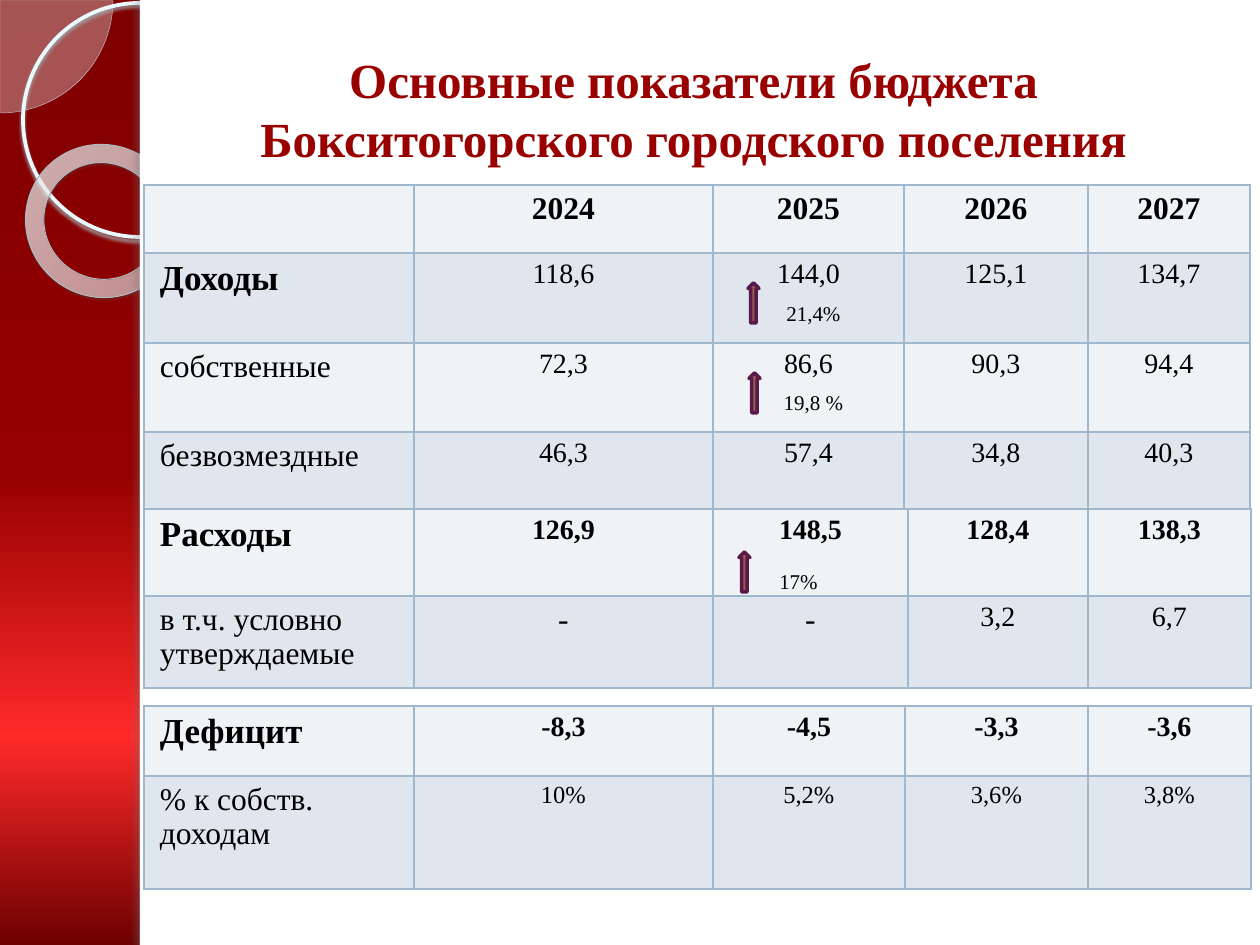
"""Slide with the main budget figures of a town settlement."""
from lxml import etree
from pptx import Presentation
from pptx import util as u
from pptx.dml.color import RGBColor
from pptx.enum import shapes, text
from pptx.oxml.ns import qn

SCALE = 914400 / 126
FONT = "Times New Roman"
COLORS = {
    "title": "990000", "ink": "000000", "white": "FFFFFF", "border": "9FB8CD",
    "light": "F0F3F6", "dark": "DFE6ED", "arrow": "955E4B", "arrow_line": "59194B",
    "pie": "F8FCFD", "pie_line": "B7CBD1", "circle_line": "E9FAFE",
    "circle_shadow": "A1AEB1", "ring_line": "AABFC4", "ring_shadow": "4E5759",
    "strip_shadow": "6D7476",
}
BACKGROUND = [(0, "7E0000", 100), (50, "960000", 96), (78, "FF2A2A", 100), (100, "6E0000", 100)]
RING = [(0, "F9FDFE", 70), (70, "FCFEFF", 55), (100, "B1D8E2", 60)]
RING_CENTER = {"l": -408, "t": -50, "r": 508, "b": 150}

TITLE = "Основные показатели бюджета\vБокситогорского городского поселения"
TABLE_LEFT = 144
TABLES = [
    (185, (270, 299, 191, 184, 162), [
        (68, ("", 20, False), ("2024", "2025", "2026", "2027"), 18, True),
        (90, ("Доходы", 20, True), ("118,6", "144,0", "125,1", "134,7"), 16, False),
        (89, ("собственные", 18, False), ("72,3", "86,6", "90,3", "94,4"), 16, False),
        (79, ("безвозмездные", 18, False), ("46,3", "57,4", "34,8", "40,3"), 16, False),
    ]),
    (509, (270, 299, 195, 180, 163), [
        (87, ("Расходы", 20, True), ("126,9", "148,5", "128,4", "138,3"), 16, True),
        (92, ("в т.ч. условно утверждаемые", 18, False), ("-", "-", "3,2", "6,7"), 16, False),
    ]),
    (706, (270, 299, 192, 183, 163), [
        (70, ("Дефицит", 20, True), ("-8,3", "-4,5", "-3,3", "-3,6"), 16, True),
        (113, ("% к собств.\nдоходам", 18, False), ("10%", "5,2%", "3,6%", "3,8%"), 14, False),
    ]),
]
ARROWS = [(748, 283), (749, 373), (739, 552)]
GROWTH = [("21,4%", (769, 294, 89, 38)), ("19,8 %", (769, 383, 89, 38)), ("17%", (759, 562, 79, 38))]


def px(value):
    return u.Emu(round(value * SCALE))


def rgb(name):
    return RGBColor.from_string(COLORS[name])


def add_color(parent, value, alpha):
    color = etree.SubElement(parent, qn("a:srgbClr"), val=value)
    if alpha < 100:
        etree.SubElement(color, qn("a:alpha"), val=str(alpha * 1000))


def paint_gradient(fill, element, stops, angle=None, center=None):
    fill.gradient()
    gradient = element.find(".//" + qn("a:gradFill"))
    stop_list = gradient.find(qn("a:gsLst"))
    for stop in list(stop_list):
        stop_list.remove(stop)
    for position, value, alpha in stops:
        stop = etree.SubElement(stop_list, qn("a:gs"), pos=str(position * 1000))
        add_color(stop, value, alpha)
    gradient.remove(gradient.find(qn("a:lin")))
    if center:
        path = etree.SubElement(gradient, qn("a:path"), path="circle")
        sides = {side: str(value * 1000) for side, value in center.items()}
        etree.SubElement(path, qn("a:fillToRect"), **sides)
    else:
        etree.SubElement(gradient, qn("a:lin"), ang=str(angle * 60000), scaled="0")


def add_shape(slide, kind, box, fill=None, alpha=100, line=None, width=0, shadow=None):
    shape = slide.shapes.add_shape(kind, *map(px, box))
    shape.shadow.inherit = False
    if fill:
        shape.fill.solid()
        shape.fill.fore_color.rgb = rgb(fill)
        if alpha < 100:
            color = shape.element.spPr.find(qn("a:solidFill"))[0]
            etree.SubElement(color, qn("a:alpha"), val=str(alpha * 1000))
    else:
        shape.fill.background()
    if line:
        shape.line.color.rgb = rgb(line)
        shape.line.width = u.Pt(width)
    else:
        shape.line.fill.background()
    if shadow:
        name, opacity, blur, distance, direction = shadow
        effects = shape.element.spPr.find(qn("a:effectLst"))
        outer = etree.SubElement(
            effects, qn("a:outerShdw"), blurRad=str(u.Pt(blur)), dist=str(u.Pt(distance)),
            dir=str(direction * 60000), algn="ctr", rotWithShape="0")
        add_color(outer, COLORS[name], opacity)
    return shape


def write(text_frame, content, size, bold=False, color="ink", align=text.PP_ALIGN.CENTER):
    text_frame.text = content
    for paragraph in text_frame.paragraphs:
        paragraph.alignment = align
        font = paragraph.font
        for run in paragraph.runs:
            font = run.font
            font.size, font.bold, font.name = u.Pt(size), bold, FONT
            font.color.rgb = rgb(color)


def add_text(slide, box, content, size, wrap, **style):
    frame = slide.shapes.add_textbox(*map(px, box)).text_frame
    frame.word_wrap = wrap
    frame.vertical_anchor = text.MSO_ANCHOR.MIDDLE
    write(frame, content, size, **style)


def style_cell(cell, fill):
    properties = cell._tc.get_or_add_tcPr()
    for side in ("lnL", "lnR", "lnT", "lnB"):
        line = etree.SubElement(properties, qn("a:" + side), w=str(u.Pt(1)))
        add_color(etree.SubElement(line, qn("a:solidFill")), COLORS["border"], 100)
    cell.fill.solid()
    cell.fill.fore_color.rgb = rgb(fill)
    cell.margin_left = cell.margin_right = px(16)
    cell.margin_top = cell.margin_bottom = px(6)


def add_budget_table(slide, top, widths, rows):
    height = sum(row[0] for row in rows)
    table = slide.shapes.add_table(
        len(rows), len(widths), px(TABLE_LEFT), px(top), px(sum(widths)), px(height)).table
    table.first_row = table.horz_banding = False
    for column, width in zip(table.columns, widths):
        column.width = px(width)
    for index, (row_height, label, values, size, bold) in enumerate(rows):
        table.rows[index].height = px(row_height)
        cells = table.rows[index].cells
        for cell in cells:
            style_cell(cell, "dark" if index % 2 else "light")
        write(cells[0].text_frame, *label, align=text.PP_ALIGN.LEFT)
        for column, value in enumerate(values, 1):
            write(cells[column].text_frame, value, 18 if value == "-" else size, bold)


def add_decoration(slide):
    kinds = shapes.MSO_SHAPE
    paint_gradient(slide.background.fill, slide.element, BACKGROUND, angle=90)
    pie = add_shape(slide, kinds.PIE, (-113, -113, 226, 226), "pie", 33, "pie_line", 0.25)
    pie.adjustments[0], pie.adjustments[1] = 0, 54.02
    add_shape(slide, kinds.OVAL, (23, 3, 234, 234), line="circle_line", width=2.15,
              shadow=("circle_shadow", 85, 2, 2, 90))
    ring = add_shape(slide, kinds.DONUT, (25, 145, 155, 152), line="ring_line", width=0.58,
                     shadow=("ring_shadow", 35, 1, 1.2, 75))
    ring.adjustments[0] = 0.12
    ring.rotation = 38.6
    paint_gradient(ring.fill, ring.element, RING, center=RING_CENTER)
    add_shape(slide, kinds.RECTANGLE, (140, 0, 1120, 945), "white")
    add_shape(slide, kinds.RECTANGLE, (140, 0, 10, 945), "white",
              shadow=("strip_shadow", 25, 3, 3, 180))


def main():
    presentation = Presentation()
    presentation.slide_width, presentation.slide_height = px(1260), px(945)
    slide = presentation.slides.add_slide(presentation.slide_layouts[6])
    add_decoration(slide)
    add_text(slide, (133, 43, 1121, 131), TITLE, 28, True, bold=True, color="title")
    for table in TABLES:
        add_budget_table(slide, *table)
    for left, top in ARROWS:
        add_shape(slide, shapes.MSO_SHAPE.UP_ARROW, (left, top, 11, 40), "arrow",
                  line="arrow_line", width=2)
    for content, box in GROWTH:
        add_text(slide, box, content, 12, False)
    presentation.save("out.pptx")


if __name__ == "__main__":
    main()
